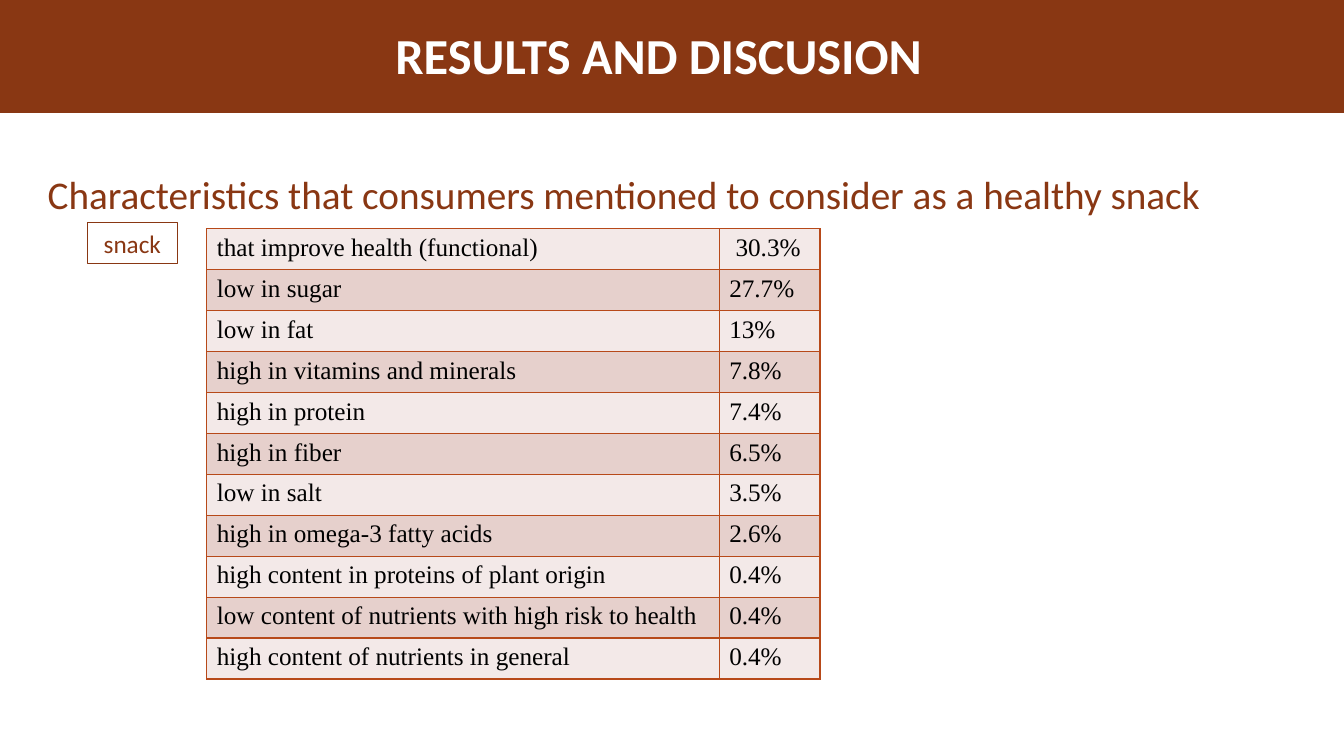
from dataclasses import dataclass

from lxml import etree
from pptx import Presentation
from pptx.dml.color import RGBColor
from pptx.enum.shapes import MSO_SHAPE
from pptx.enum.text import MSO_ANCHOR, MSO_AUTO_SIZE, PP_ALIGN
from pptx.oxml.ns import qn
from pptx.util import Emu, Pt

RECT = MSO_SHAPE.RECTANGLE
LEFT, CENTER, JUSTIFY = PP_ALIGN.LEFT, PP_ALIGN.CENTER, PP_ALIGN.JUSTIFY
TOP, MIDDLE = MSO_ANCHOR.TOP, MSO_ANCHOR.MIDDLE
FIXED = MSO_AUTO_SIZE.NONE

PX = 9525  # EMU in one px, at 96 px to the inch
SANS, SERIF = "Calibri", "Times New Roman"
COLORS = {
    "brown": "893713",
    "rust": "B74919",
    "pale": "F3E9E8",
    "rose": "E6D0CC",
    "white": "FFFFFF",
    "black": "000000",
}


@dataclass
class Box:
    x: int
    y: int
    w: int
    h: int
    fill: str = ""
    line: str = ""
    width: float = 1

    def emu(self) -> list[Emu]:
        return [Emu(n * PX) for n in (self.x, self.y, self.w, self.h)]


@dataclass
class Trait:
    name: str
    share: str


TRAITS = [
    Trait("that improve health (functional)", " 30.3%"),
    Trait("low in sugar", "27.7%"),
    Trait("low in fat", "13%"),
    Trait("high in vitamins and minerals", "7.8%"),
    Trait("high in protein", "7.4%"),
    Trait("high in fiber", "6.5%"),
    Trait("low in salt", "3.5%"),
    Trait("high in omega-3 fatty acids", "2.6%"),
    Trait("high content in proteins of plant origin", "0.4%"),
    Trait("low content of nutrients with high risk to health", "0.4%"),
    Trait("high content of nutrients in general", "0.4%"),
]
COLS = (488, 96)
ROW = 39


def rgb(name: str) -> RGBColor:
    return RGBColor.from_string(COLORS[name])


def write(frame, text: str, *, size: int, color: str, font: str = SANS,
          bold: bool = False, align=LEFT, anchor=MIDDLE) -> None:
    frame.word_wrap = True
    frame.auto_size = FIXED
    frame.vertical_anchor = anchor
    style(frame.paragraphs[0], text, size, color, font, bold, align)


def style(para, text: str, size: int, color: str, font: str,
          bold: bool, align) -> None:
    para.alignment = align
    run = para.add_run()
    run.text = text
    run.font.name, run.font.size, run.font.bold = font, Pt(size), bold
    run.font.color.rgb = rgb(color)


def draw(slide, box: Box):
    shape = slide.shapes.add_shape(RECT, *box.emu())
    shape.shadow.inherit = False
    if box.fill:
        shape.fill.solid()
        shape.fill.fore_color.rgb = rgb(box.fill)
    else:
        shape.fill.background()
    if box.line:
        shape.line.color.rgb = rgb(box.line)
        shape.line.width = Pt(box.width)
    else:
        shape.line.fill.background()
    return shape


def edge(cell, color: str) -> None:
    props = cell._tc.get_or_add_tcPr()
    for spot, side in enumerate(("lnL", "lnR", "lnT", "lnB")):
        line = etree.Element(qn(f"a:{side}"), w=str(Pt(1)))
        fill = etree.SubElement(line, qn("a:solidFill"))
        etree.SubElement(fill, qn("a:srgbClr"), val=COLORS[color])
        props.insert(spot, line)


def grid(slide, x: int, y: int) -> None:
    area = Box(x, y, sum(COLS), ROW * len(TRAITS))
    table = slide.shapes.add_table(len(TRAITS), len(COLS), *area.emu()).table
    table.first_row = table.horz_banding = False
    for col, width in zip(table.columns, COLS):
        col.width = Emu(width * PX)
    for i, trait in enumerate(TRAITS):
        table.rows[i].height = Emu(ROW * PX)
        for cell, text in zip(table.rows[i].cells, (trait.name, trait.share)):
            style(cell.text_frame.paragraphs[0], text, 18, "black",
                  SERIF, False, LEFT)
            cell.vertical_anchor = TOP
            cell.fill.solid()
            cell.fill.fore_color.rgb = rgb("rose" if i % 2 else "pale")
            edge(cell, "rust")


def main() -> None:
    deck = Presentation()
    deck.slide_width, deck.slide_height = Emu(1280 * PX), Emu(720 * PX)
    slide = deck.slides.add_slide(deck.slide_layouts[5])

    # Title on its band
    title = slide.shapes.title
    title.left, title.top, title.width, title.height = Box(367, 18, 526, 68).emu()
    write(title.text_frame, "RESULTS AND DISCUSION",
          size=36, color="white", bold=True)
    band = draw(slide, Box(0, -2, 1280, 109, "brown", "brown"))
    title._element.addprevious(band._element)

    # Heading and label
    head = draw(slide, Box(36, 157, 1144, 55, "white"))
    write(head.text_frame,
          "Characteristics that consumers mentioned to consider as a healthy snack",
          size=28, color="brown", align=JUSTIFY)
    label = draw(slide, Box(83, 212, 86, 39, line="brown", width=0.75))
    write(label.text_frame, "snack", size=18, color="brown", align=CENTER)

    # Table of traits
    grid(slide, 197, 218)

    deck.save("out.pptx")


if __name__ == "__main__":
    main()
